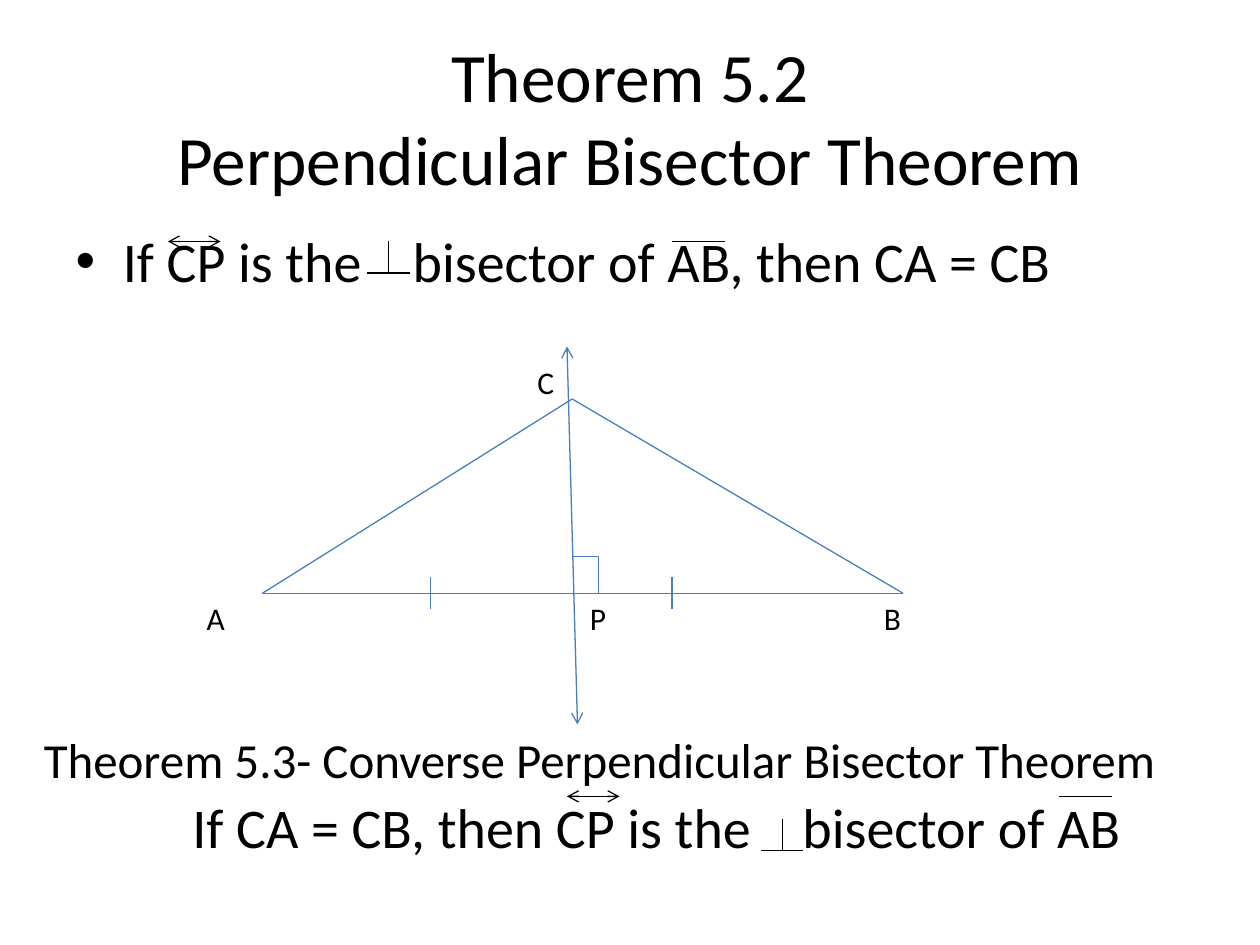
from lxml.etree import SubElement
from pptx import Presentation
from pptx.dml.color import RGBColor
from pptx.enum.shapes import MSO_CONNECTOR
from pptx.enum.text import MSO_AUTO_SIZE
from pptx.oxml.ns import qn
from pptx.util import Inches, Pt

CELLS_PER_INCH = 24
BLACK = "000000"
BLUE = "4B7EBC"
MARK = 10


def grid(n):
    return Inches(n / CELLS_PER_INCH)


def color(value):
    return RGBColor.from_string(value)


def place(sp, left, top, width, height):
    sp.left, sp.top, sp.width, sp.height = map(grid, (left, top, width, height))


def format_runs(tf, size):
    for p in tf.paragraphs:
        for r in p.runs:
            r.font.name = "Calibri"
            r.font.size = Pt(size)
            r.font.color.rgb = color(BLACK)


def write_statement(tf, before, after):
    p = tf.paragraphs[0]
    for text in (before, " ", after):
        p.add_run().text = text
    format_runs(tf, 32)
    p.runs[1].font._element.set("spc", "2170")


def add_box(s, left, top, width, height):
    sp = s.shapes.add_textbox(*map(grid, (left, top, width, height)))
    tf = sp.text_frame
    tf.word_wrap = True
    tf.auto_size = MSO_AUTO_SIZE.SHAPE_TO_FIT_TEXT
    return tf


def add_label(s, text, size, *box):
    tf = add_box(s, *box)
    tf.text = text
    format_runs(tf, size)


def add_line(s, start, end, value=BLACK, arrows=False):
    points = map(grid, (*start, *end))
    sp = s.shapes.add_connector(MSO_CONNECTOR.STRAIGHT, *points)
    sp.line.color.rgb = color(value)
    sp.line.width = Pt(0.75)
    if arrows:
        ln = sp.line._get_or_add_ln()
        for tag in ("a:headEnd", "a:tailEnd"):
            SubElement(ln, qn(tag)).set("type", "arrow")
    SubElement(sp._element.spPr, qn("a:effectLst"))


def add_overline(s, left, top, arrows=False):
    add_line(s, (left, top), (left + MARK, top), arrows=arrows)


def add_perpendicular(s, center, base):
    add_line(s, (center, base - 6), (center, base))
    add_line(s, (center - 4, base), (center + 4, base))


def add_diagram(s):
    a, b, c = (50, 113), (172, 113), (109, 76)
    add_line(s, (108, 66), (110, 138), BLUE, arrows=True)
    for start, end in ((a, b), (a, c), (c, b)):
        add_line(s, start, end, BLUE)
    for x in (82, 128):
        add_line(s, (x, 110), (x, 116), BLUE)
    corner = (114, 106)
    add_line(s, (109, 106), corner, BLUE)
    add_line(s, corner, (114, 113), BLUE)
    for text, left, top, width in (
        ("A", 37, 113, 13),
        ("B", 166, 113, 14),
        ("P", 110, 113, 11),
        ("C", 100, 68, 8),
    ):
        add_label(s, text, 18, left, top, width, 9.7)


def add_theorem(s):
    title, body = s.placeholders
    place(title, 12, 7.2, 216, 30)
    title.text_frame.text = "Theorem 5.2\vPerpendicular Bisector Theorem"
    title.text_frame.auto_size = MSO_AUTO_SIZE.NONE
    format_runs(title.text_frame, 39.6)
    place(body, 12, 42, 216, 96)
    write_statement(body.text_frame, "If CP is the", "bisector of AB, then CA = CB")
    add_overline(s, 32, 46, arrows=True)
    add_perpendicular(s, 74, 52)
    add_overline(s, 128, 46)


def add_converse(s):
    heading = "Theorem 5.3- Converse Perpendicular Bisector Theorem"
    add_label(s, heading, 28, 6, 137.8, 228, 13.7)
    tf = add_box(s, 34.3, 149.8, 182, 15.4)
    write_statement(tf, "If CA = CB, then CP is the", "bisector of AB")
    add_overline(s, 108, 151.7, arrows=True)
    add_perpendicular(s, 149, 162)
    add_overline(s, 201.8, 151.7)


def main():
    prs = Presentation()
    prs.slide_width, prs.slide_height = Inches(10), Inches(7.5)
    s = prs.slides.add_slide(prs.slide_layouts[1])
    add_theorem(s)
    add_diagram(s)
    add_converse(s)
    prs.save("out.pptx")


if __name__ == "__main__":
    main()
